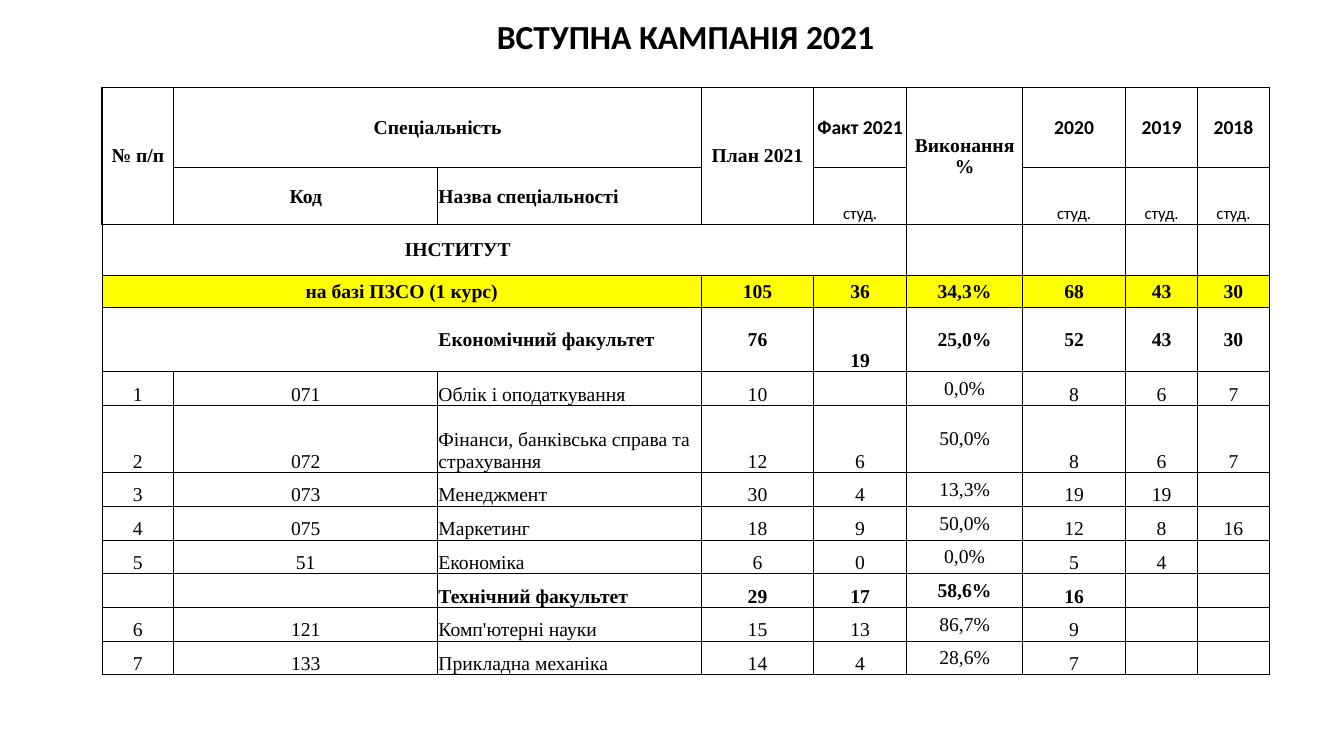
from lxml.etree import SubElement
from pptx import Presentation
from pptx.dml.color import RGBColor
from pptx.enum.text import MSO_ANCHOR, PP_ALIGN
from pptx.oxml.ns import qn
from pptx.util import Cm, Pt

BLACK = RGBColor(0, 0, 0)
WHITE = RGBColor(255, 255, 255)
YELLOW = RGBColor(255, 255, 0)

COLUMN_WIDTHS = [1.81, 6.65, 6.65, 2.82, 2.35, 2.92, 2.6, 1.81, 1.81]
ROW_HEIGHTS = [1.02, 0.72, 2.02, 1.43, 1.28, 0.81, 1.62, 0.85, 1.69] + [0.85] * 6
TITLE, GAP, HEADER, SUBHEADER, INSTITUTE, TOTAL, ECONOMICS, FIRST_SPECIALITY = range(8)
TECHNICAL = 12
CODE, NAME, PLAN, FACT, PERCENT = range(1, 6)
MERGES = [
    (TITLE, 0, TITLE, 8),
    (HEADER, 0, SUBHEADER, 0),
    (HEADER, CODE, HEADER, NAME),
    (HEADER, PLAN, SUBHEADER, PLAN),
    (HEADER, PERCENT, SUBHEADER, PERCENT),
    (INSTITUTE, 0, INSTITUTE, PLAN),
    (TOTAL, 0, TOTAL, NAME),
]
ROWS = [
    ["ВСТУПНА КАМПАНІЯ 2021"],
    [],
    ["№ п/п", "Спеціальність", "", "План 2021", "Факт 2021", "Виконання %", "2020", "2019", "2018"],
    ["", "Код", "Назва спеціальності", "", "студ.", "", "студ.", "студ.", "студ."],
    ["ІНСТИТУТ"],
    ["на базі ПЗСО (1 курс)", "", "", "105", "36", "34,3%", "68", "43", "30"],
    ["", "", "Економічний факультет", "76", "19", "25,0%", "52", "43", "30"],
    ["1", "071", "Облік і оподаткування", "10", "", "0,0%", "8", "6", "7"],
    ["2", "072", "Фінанси, банківська справа та страхування", "12", "6", "50,0%", "8", "6", "7"],
    ["3", "073", "Менеджмент", "30", "4", "13,3%", "19", "19", ""],
    ["4", "075", "Маркетинг", "18", "9", "50,0%", "12", "8", "16"],
    ["5", "51", "Економіка", "6", "0", "0,0%", "5", "4", ""],
    ["", "", "Технічний факультет", "29", "17", "58,6%", "16", "", ""],
    ["6", "121", "Комп'ютерні науки", "15", "13", "86,7%", "9", "", ""],
    ["7", "133", "Прикладна механіка", "14", "4", "28,6%", "7", "", ""],
]


def border_widths(row, column):
    if row == TITLE:
        return {}
    if row == GAP:
        return {"B": 1 if column <= PLAN else 0.5}
    widths = dict.fromkeys("LRTB", 0.5)
    if row in (HEADER, SUBHEADER):
        if column <= NAME:
            widths = dict.fromkeys("LRTB", 1)
        elif column == PLAN:
            widths.update(L=1, T=1)
    if row == INSTITUTE and column <= PLAN:
        widths["T"] = 1
        del widths["R"]
    if row == INSTITUTE and 0 < column <= FACT:
        del widths["L"]
    if row == ECONOMICS and column < NAME:
        del widths["R"]
    if row == ECONOMICS and 0 < column <= NAME:
        del widths["L"]
    return widths


def draw_borders(cell, widths):
    properties = cell._tc.get_or_add_tcPr()
    for side in "LRTB":
        width = widths.get(side, 0)
        line = SubElement(properties, qn(f"a:ln{side}"), w=str(int(Pt(width))))
        if width:
            fill = SubElement(line, qn("a:solidFill"))
            SubElement(fill, qn("a:srgbClr"), val=str(BLACK))
        else:
            SubElement(line, qn("a:noFill"))


def paint_cell(cell, row, column):
    if row == TOTAL:
        color = YELLOW
    elif row > FIRST_SPECIALITY and column in (NAME, PLAN):
        color = WHITE
    else:
        cell.fill.background()
        return
    cell.fill.solid()
    cell.fill.fore_color.rgb = color


def anchor_for(row, column):
    at_bottom = (
        row == TITLE
        or (row == SUBHEADER and column >= FACT)
        or (row == ECONOMICS and column == FACT)
        or (row >= FIRST_SPECIALITY and column != PERCENT)
    )
    return MSO_ANCHOR.BOTTOM if at_bottom else MSO_ANCHOR.MIDDLE


def write_text(cell, text, row, column):
    cell.margin_left = cell.margin_right = cell.margin_top = Cm(0.02)
    cell.margin_bottom = 0
    cell.vertical_anchor = anchor_for(row, column)
    para = cell.text_frame.paragraphs[0]
    if not text:
        SubElement(para._p, qn("a:endParaRPr"), sz="1200")
        return
    para.text = text
    left = column == NAME and row >= SUBHEADER
    para.alignment = PP_ALIGN.LEFT if left else PP_ALIGN.CENTER
    is_unit = row == SUBHEADER and column >= FACT
    is_sans = row == TITLE or is_unit or (row == HEADER and column >= FACT and column != PERCENT)
    font = para.font
    font.name = "Calibri" if is_sans else "Times New Roman"
    font.size = Pt(24 if row == TITLE else 12 if is_unit else 14)
    font.bold = not is_unit and (row < FIRST_SPECIALITY or row == TECHNICAL)
    font.color.rgb = BLACK


def add_admission_table(page):
    frame = page.shapes.add_table(
        len(ROWS), len(COLUMN_WIDTHS), Cm(2.57), Cm(0.43),
        Cm(sum(COLUMN_WIDTHS)), Cm(sum(ROW_HEIGHTS)),
    )
    table = frame.table
    table.first_row = False
    table.horz_banding = False
    for column, width in zip(table.columns, COLUMN_WIDTHS):
        column.width = Cm(width)
    for row, height in zip(table.rows, ROW_HEIGHTS):
        row.height = Cm(height)
    for top, left, bottom, right in MERGES:
        table.cell(top, left).merge(table.cell(bottom, right))
    for row, texts in enumerate(ROWS):
        for column in range(len(COLUMN_WIDTHS)):
            cell = table.cell(row, column)
            text = texts[column] if column < len(texts) else ""
            write_text(cell, text, row, column)
            draw_borders(cell, border_widths(row, column))
            paint_cell(cell, row, column)


def main():
    deck = Presentation()
    deck.slide_width = Cm(33.87)
    deck.slide_height = Cm(19.05)
    page = deck.slides.add_slide(deck.slide_layouts[6])
    add_admission_table(page)
    deck.save("out.pptx")


if __name__ == "__main__":
    main()
